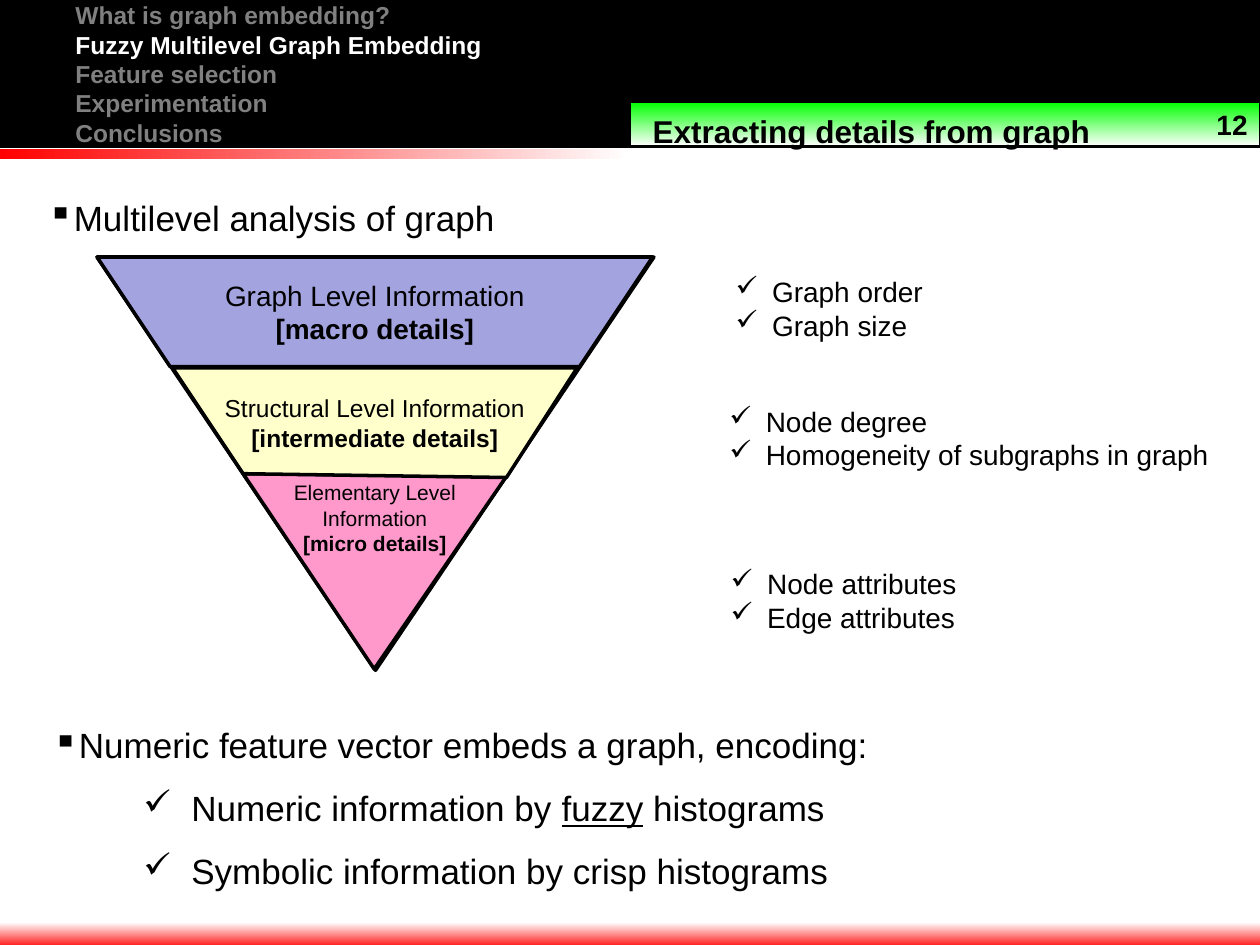
import pptx
import pptx.util
import pptx.dml.color
import pptx.enum.shapes
import pptx.enum.text
import lxml.etree
from pptx.util import Inches

RGBColor = pptx.dml.color.RGBColor
MSO_SHAPE = pptx.enum.shapes.MSO_SHAPE
ALIGN = pptx.enum.text.PP_ALIGN
ANCHOR = pptx.enum.text.MSO_ANCHOR

BLACK = RGBColor(0x00, 0x00, 0x00)
WHITE = RGBColor(0xFF, 0xFF, 0xFF)
GREY = RGBColor(0x80, 0x80, 0x80)
RED = RGBColor(0xFF, 0x00, 0x00)
GREEN = RGBColor(0x00, 0xFF, 0x00)
LILAC = RGBColor(0xA3, 0xA3, 0xE0)
CREAM = RGBColor(0xFF, 0xFF, 0xCC)
PINK = RGBColor(0xFF, 0x99, 0xCC)


class Deck:
    """Holds the text style and the current slide, and draws each kind of element."""

    font = "Arial"

    def __init__(self):
        self.prs = pptx.Presentation()
        self.prs.slide_width, self.prs.slide_height = Inches(10), Inches(7.5)
        self.s = self.prs.slides.add_slide(self.prs.slide_layouts[5])

    def format(self, p, size, color=BLACK, bold=False, align=ALIGN.LEFT):
        p.alignment = align
        for r in p.runs:
            r.font.name, r.font.size = self.font, pptx.util.Pt(size)
            r.font.color.rgb, r.font.bold = color, bold

    def indent(self, p, margin, first=0, bullet=None):
        pPr = p._p.get_or_add_pPr()
        pPr.set("marL", str(Inches(margin)))
        pPr.set("indent", str(Inches(first)))
        if bullet:
            bu = lxml.etree.SubElement(pPr, pptx.oxml.ns.qn("a:buChar"))
            bu.set("char", bullet)

    def outline(self, sp, width):
        sp.shadow.inherit = False
        if width:
            sp.line.color.rgb, sp.line.width = BLACK, pptx.util.Pt(width)
        else:
            sp.line.fill.background()

    def shape(self, kind, box, fill=None, line=0):
        sp = self.s.shapes.add_shape(kind, *map(Inches, box))
        if fill:
            sp.fill.solid()
            sp.fill.fore_color.rgb = fill
        else:
            sp.fill.background()
        self.outline(sp, line)
        return sp

    def gradient(self, box, start, end, angle, line=0):
        sp = self.shape(MSO_SHAPE.RECTANGLE, box, line=line)
        sp.fill.gradient()
        sp.fill.gradient_angle = angle
        for stop, color in zip(sp.fill.gradient_stops, (start, end)):
            stop.color.rgb = color
        return sp

    def title(self, text, box, size):
        sp = self.s.shapes.title
        sp.left, sp.top, sp.width, sp.height = map(Inches, box)
        tf = sp.text_frame
        tf.text = text
        tf.auto_size = pptx.enum.text.MSO_AUTO_SIZE.NONE
        tf.vertical_anchor = ANCHOR.TOP
        self.format(tf.paragraphs[0], size, bold=True)
        self.s.shapes._spTree.append(sp._element)

    def text_box(self, box):
        tf = self.s.shapes.add_textbox(*map(Inches, box)).text_frame
        tf.word_wrap = True
        return tf

    def checks(self, box, items):
        tf = self.text_box(box)
        tf.text = "\n".join(items)
        for p in tf.paragraphs:
            self.format(p, 16)
            self.indent(p, 0.29, -0.29, "✓")

    def points(self, box, heading, items=()):
        tf = self.text_box(box)
        tf.text = "\n".join([heading, *items])
        for i, p in enumerate(tf.paragraphs):
            before, mark, after = p.text.partition(" fuzzy ")
            if mark:
                p.text = before + " "
                p.add_run().text = mark.strip()
                p.add_run().text = " " + after
                p.runs[1].font.underline = True
            self.format(p, 20, align=ALIGN.JUSTIFY)
            p.line_spacing = 1.5
            if i:
                p.level = 1
                self.indent(p, 1.1, -0.38, "✓")
            else:
                self.indent(p, 0.1, -0.1, "▪")

    def level(self, corners, fill, name, detail, size, anchor=ANCHOR.MIDDLE):
        points = [(Inches(x), Inches(y)) for x, y in corners]
        builder = self.s.shapes.build_freeform(*points[0], scale=1.0)
        builder.add_line_segments(points[1:], close=True)
        sp = builder.convert_to_shape()
        sp.fill.solid()
        sp.fill.fore_color.rgb = fill
        self.outline(sp, 2)
        tf = sp.text_frame
        tf.word_wrap, tf.vertical_anchor = True, anchor
        tf.text = f"{name}\n[{detail}]"
        for p, bold in zip(tf.paragraphs, (False, True)):
            self.format(p, size, bold=bold, align=ALIGN.CENTER)


def main():
    deck = Deck()

    tf = deck.shape(MSO_SHAPE.RECTANGLE, (0, 0, 10, 1.17), BLACK, 0.75).text_frame
    tf.word_wrap, tf.vertical_anchor = False, ANCHOR.MIDDLE
    sections = ["What is graph embedding?", "Fuzzy Multilevel Graph Embedding",
                "Feature selection", "Experimentation", "Conclusions"]
    tf.text = "\n".join(sections)
    for p in tf.paragraphs:
        deck.format(p, 14, WHITE if p.text == sections[1] else GREY, True)
        deck.indent(p, 0.5)

    deck.gradient((0, 7.32, 10, 0.21), WHITE, RED, 270)
    deck.gradient((0, 1.18, 5, 0.08), RED, WHITE, 0)
    tf = deck.gradient((5, 0.81, 5, 0.35), GREEN, WHITE, 270, 0.75).text_frame
    tf.word_wrap, tf.vertical_anchor = False, ANCHOR.MIDDLE
    tf.text = "12"
    deck.format(tf.paragraphs[0], 16, bold=True, align=ALIGN.RIGHT)
    deck.title("Extracting details from graph", (5.08, 0.84, 4.55, 0.4), 18)

    deck.points((0.28, 1.34, 9.11, 0.54), "Multilevel analysis of graph")
    deck.checks((5.74, 2.13, 2.31, 0.64), ["Graph order", "Graph size"])
    deck.checks((5.69, 3.16, 4.04, 0.64),
                ["Node degree", "Homogeneity of subgraphs in graph"])
    deck.checks((5.7, 4.45, 2.31, 0.64), ["Node attributes", "Edge attributes"])

    pyramid = deck.shape(MSO_SHAPE.ISOSCELES_TRIANGLE, (0.77, 2.04, 4.42, 3.28), line=2)
    pyramid.rotation = 180
    deck.level([(0.77, 2.04), (5.18, 2.04), (4.6, 2.91), (1.35, 2.91)], LILAC,
               "Graph Level Information", "macro details", 16)
    deck.level([(1.93, 3.76), (4.02, 3.78), (2.97, 5.31)], PINK,
               "Elementary Level Information", "micro details", 12, ANCHOR.TOP)
    deck.level([(1.37, 2.92), (4.58, 2.92), (4.02, 3.79), (1.93, 3.76)], CREAM,
               "Structural Level Information", "intermediate details", 14)

    deck.points((0.32, 5.53, 9.11, 1.62),
                "Numeric feature vector embeds a graph, encoding:",
                ["Numeric information by fuzzy histograms",
                 "Symbolic information by crisp histograms"])
    deck.prs.save("out.pptx")


if __name__ == "__main__":
    main()
